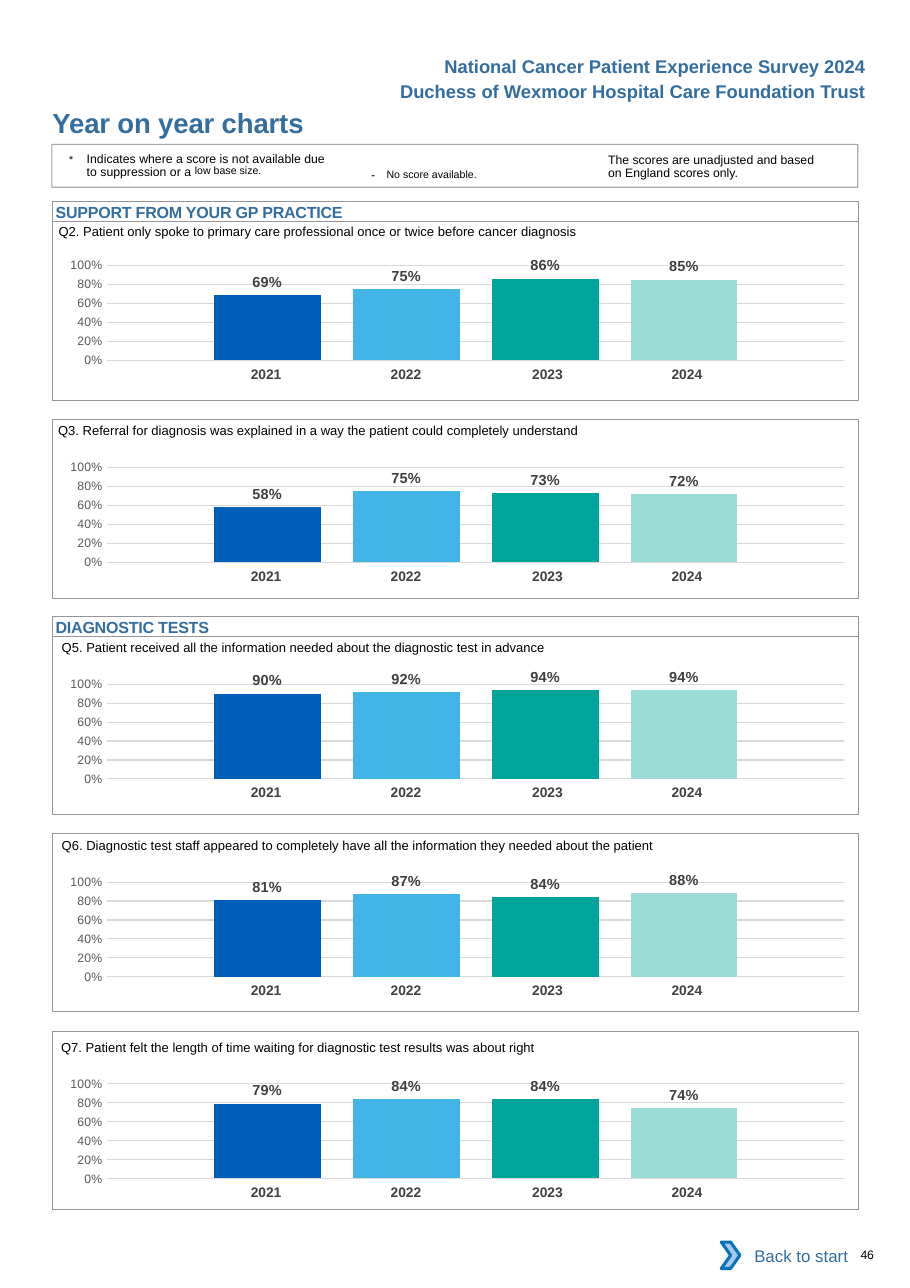
import dataclasses

import lxml.etree
import pptx
import pptx.chart.data
import pptx.dml.color
import pptx.enum.chart
import pptx.enum.shapes
import pptx.enum.text
import pptx.oxml.ns
import pptx.util

Pt = pptx.util.Pt
qn = pptx.oxml.ns.qn
SHAPE = pptx.enum.shapes.MSO_SHAPE
ALIGN = pptx.enum.text.PP_ALIGN
ANCHOR = pptx.enum.text.MSO_ANCHOR


@dataclasses.dataclass(frozen=True)
class Theme:
    font: str = "Arial"
    chart_font: str = "Calibri"
    heading: str = "336E9F"
    ink: str = "000000"
    paper: str = "FFFFFF"
    frame: str = "939598"
    axis: str = "595959"
    grid: str = "D9D9D9"
    label: str = "404040"
    year: str = "414042"
    arrow: str = "A8C7E9"
    arrow_line: str = "0A74BB"
    bars: tuple = ("005EB8", "41B6E6", "00A499", "9CDCD7")
    title_size: float = 18
    header_size: float = 12
    link_size: float = 11
    section_size: float = 10.5
    chart_size: float = 10
    label_size: float = 9.5
    year_size: float = 9
    question_size: float = 8.5
    small_size: float = 8
    raised_size: float = 12


T = Theme()
YEARS = ("2021", "2022", "2023", "2024")
YEAR_COLS = ((91.4, 0), (91.4, 0), (96.5, 3), (91.4, 8.6))  # width, right margin


def rgb(color):
    return pptx.dml.color.RGBColor.from_string(color)


def apply(obj, values):
    for name, value in values.items():
        setattr(obj, name, value)


def style_font(font, size, color, bold=False, name=T.font):
    apply(font, {"name": name, "size": Pt(size), "bold": bold})
    font.color.rgb = rgb(color)


def write(tf, runs, size, color=T.ink, bold=False, margins=(0, 0, 0, 0),
          anchor=ANCHOR.TOP, align=ALIGN.LEFT, line=None):
    """Fill a frame; each run is (text, rPr attributes such as sz, spc, baseline)."""
    sides = ("margin_left", "margin_top", "margin_right", "margin_bottom")
    apply(tf, dict(zip(sides, map(Pt, margins))))
    apply(tf, {"word_wrap": True, "vertical_anchor": anchor})
    p = tf.paragraphs[0]
    apply(p, {"alignment": align, "line_spacing": Pt(line) if line else None})
    for text, attrs in runs:
        r = p.add_run()
        r.text = text
        style_font(r.font, size, color, bold)
        for name, value in attrs.items():
            r._r.get_or_add_rPr().set(name, str(value))
    return p


def add_text(s, box, runs, size, **options):
    sp = s.shapes.add_textbox(*map(Pt, box))
    return write(sp.text_frame, runs, size, **options)


def add_box(s, box, kind=SHAPE.RECTANGLE, fill=None, line=None, width=0.5):
    sp = s.shapes.add_shape(kind, *map(Pt, box))
    sp.shadow.inherit = False
    for part, color in ((sp.fill, fill), (sp.line.fill, line)):
        if color:
            part.solid()
            part.fore_color.rgb = rgb(color)
        else:
            part.background()
    if line:
        sp.line.width = Pt(width)
    return sp


def add_header(s, box):
    x, y, w, h = box
    lines = ("National Cancer Patient Experience Survey 2024",
             "Duchess of Wexmoor Hospital Care Foundation Trust")
    for i, text in enumerate(lines):
        add_text(s, (x, y + i * 16.2, w, 21.6), [(text, {})], T.header_size, color=T.heading,
                 bold=True, align=ALIGN.RIGHT, margins=(7.2, 3.6, 7.2, 3.6))
    add_text(s, (x, y + 36.9, 324, 22), [("Year on year charts", {"spc": -10})],
             T.title_size, color=T.heading, bold=True)


def add_notes_box(s, box):
    x, y, w, h = box
    raised = {"sz": T.raised_size * 100, "baseline": 3000}
    # Suppressed scores
    p = add_text(s, (x + 11.3, y + 4.6, 174, 24), [
        ("*\t", raised),
        ("Indicates where a score is not available due to suppression or a ", {}),
        ("low base size.", dict(raised, baseline=7000))],
        T.small_size, margins=(0, 2.2, 0, 0), line=8.1)
    for name, value in {"marL": Pt(11.5), "indent": Pt(-11.5)}.items():
        p._p.get_or_add_pPr().set(name, str(value))
    # Missing scores
    add_text(s, (x + 201.5, y + 7.4, 132, 17), [
        ("- ", {"spc": 260}), ("No score available.", raised)],
        T.small_size, margins=(7.2, 3.6, 7.2, 3.6))
    # Basis of scores
    add_text(s, (x + 363.5, y + 4.6, 144.5, 19.5), [
        ("The scores are unadjusted and based on England scores only.", {})],
        T.small_size, margins=(0, 2.2, 0, 0), line=8.1)
    frame = add_box(s, box, line=T.frame, width=0.75)
    color = frame.line.fill.fore_color._xFill.find(qn("a:srgbClr"))
    lxml.etree.SubElement(color, qn("a:alpha")).set("val", "80000")


def add_section(s, box, text):
    sp = add_box(s, box, line=T.frame)
    write(sp.text_frame, [(text, {"spc": -12})], T.section_size, color=T.heading,
          bold=True, margins=(2, 0.7, 0, 0))


def add_bars(s, box, scores):
    data = pptx.chart.data.CategoryChartData(number_format="0%")
    data.categories = ["1"]
    for i, score in enumerate(scores, 1):
        data.add_series(f"Series {i}", [score])
    kind = pptx.enum.chart.XL_CHART_TYPE.COLUMN_CLUSTERED
    chart = s.shapes.add_chart(kind, *map(Pt, box), data).chart
    apply(chart, {"has_legend": False, "has_title": False})
    style_font(chart.font, T.chart_size, T.ink, name=T.chart_font)
    plot = chart.plots[0]
    apply(plot, {"gap_width": 200, "overlap": -30, "vary_by_categories": False})
    # Bars and their labels
    for series, color in zip(plot.series, T.bars):
        series.format.fill.solid()
        series.format.fill.fore_color.rgb = rgb(color)
        labels = series.data_labels
        apply(labels, {"show_value": True, "number_format": "0%",
                       "number_format_is_linked": False,
                       "position": pptx.enum.chart.XL_LABEL_POSITION.OUTSIDE_END})
        style_font(labels.font, T.label_size, T.label, bold=True)
    # Axes
    chart.category_axis.visible = False
    axis = chart.value_axis
    apply(axis, {"minimum_scale": 0, "maximum_scale": 1, "major_unit": 0.2,
                 "has_major_gridlines": True,
                 "major_tick_mark": pptx.enum.chart.XL_TICK_MARK.NONE})
    apply(axis.tick_labels, {"number_format": "0%", "number_format_is_linked": False})
    style_font(axis.tick_labels.font, T.small_size, T.axis)
    axis.format.line.fill.background()
    axis.major_gridlines.format.line.color.rgb = rgb(T.grid)
    axis.major_gridlines.format.line.width = Pt(0.75)
    # Fixed plot area
    area = chart._chartSpace.find(".//" + qn("c:plotArea"))
    for old in area.findall(qn("c:layout")):
        area.remove(old)
    layout = lxml.etree.Element(qn("c:layout"))
    manual = lxml.etree.SubElement(layout, qn("c:manualLayout"))
    for tag, value in (("layoutTarget", "inner"), ("xMode", "edge"), ("yMode", "edge"),
                       ("x", 0.08), ("y", 0.145), ("w", 0.915), ("h", 0.666)):
        lxml.etree.SubElement(manual, qn("c:" + tag)).set("val", str(value))
    area.insert(0, layout)


def add_years(s, box):
    table = s.shapes.add_table(1, len(YEARS), *map(Pt, box)).table
    apply(table, {"first_row": False, "horz_banding": False})
    for i, (year, (width, right)) in enumerate(zip(YEARS, YEAR_COLS)):
        table.columns[i].width = Pt(width)
        cell = table.cell(0, i)
        cell.fill.background()
        apply(cell, dict(margin_left=Pt(7.2), margin_right=Pt(right),
                         margin_top=Pt(3.6), margin_bottom=Pt(3.6)))
        p = cell.text_frame.paragraphs[0]
        p.alignment = ALIGN.CENTER
        r = p.add_run()
        r.text = year
        style_font(r.font, T.year_size, T.year, bold=True)


def add_panel(s, box, question, text_at, chart_dy, scores):
    x, y, w, h = box
    dx, dy = text_at
    add_text(s, (x + dx, y + dy, w - dx, 10), [(question, {})], T.question_size)
    add_years(s, (x + 90.3, y + chart_dy + 76, 370.7, 19.4))
    add_bars(s, (x - 6.5, y + chart_dy, w, 93), scores)
    add_box(s, box, line=T.frame)


def add_footer(s, box):
    x, y, w, h = box
    link = add_box(s, (x + 5, y, 85, h), fill=T.paper)
    write(link.text_frame, [("Back to start", {})], T.link_size, color=T.heading,
          anchor=ANCHOR.MIDDLE, align=ALIGN.RIGHT, margins=(7.2, 3.6, 7.2, 3.6))
    add_box(s, (x, y + 6.5, 12.2, 17.3), SHAPE.CHEVRON, T.arrow, T.arrow_line, 2)
    add_text(s, (x + 91, y + 10, 30, 9.5), [("46", {"spc": -20})], T.small_size)


PANELS = (  # top, question, question offset, chart offset, scores
    (144.9, "Q2. Patient only spoke to primary care professional once or twice before cancer "
     "diagnosis", (4, 1), 15.1, (0.69, 0.75, 0.86, 0.85)),
    (274.2, "Q3. Referral for diagnosis was explained in a way the patient could completely "
     "understand", (3.7, 2), 17.8, (0.58, 0.75, 0.73, 0.72)),
    (415.9, "Q5. Patient received all the information needed about the diagnostic test in "
     "advance", (6, 1.8), 17.8, (0.9, 0.92, 0.94, 0.94)),
    (544.3, "Q6. Diagnostic test staff appeared to completely have all the information they "
     "needed about the patient", (6, 3), 18.7, (0.81, 0.87, 0.84, 0.88)),
    (673.9, "Q7. Patient felt the length of time waiting for diagnostic test results was about "
     "right", (5.6, 5.3), 20.9, (0.79, 0.84, 0.84, 0.74)),
)


def main():
    prs = pptx.Presentation()
    apply(prs, {"slide_width": Pt(594.72), "slide_height": Pt(841.68)})
    s = prs.slides.add_slide(prs.slide_layouts[6])
    left, width = 34.3, 526.7
    add_header(s, (left, 32.6, 538.7, 60))
    add_notes_box(s, (left - 0.4, 94.4, width, 28))
    for top, text in ((131.8, "SUPPORT FROM YOUR GP PRACTICE"), (402.7, "DIAGNOSTIC TESTS")):
        add_section(s, (left, top, width, 13), text)
    for top, *content in PANELS:
        add_panel(s, (left, top, width, 116.6), *content)
    add_footer(s, (471.4, 805.2, 120, 30.2))
    prs.save("out.pptx")


if __name__ == "__main__":
    main()
